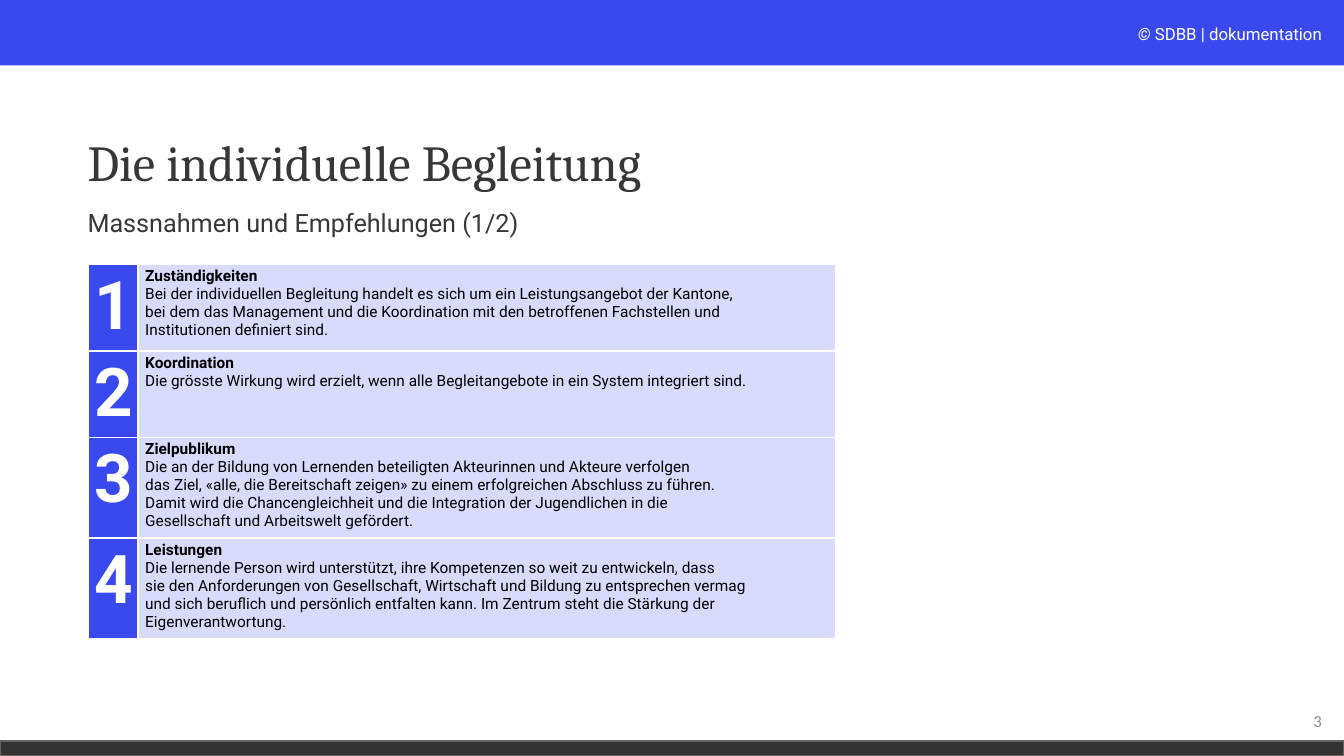
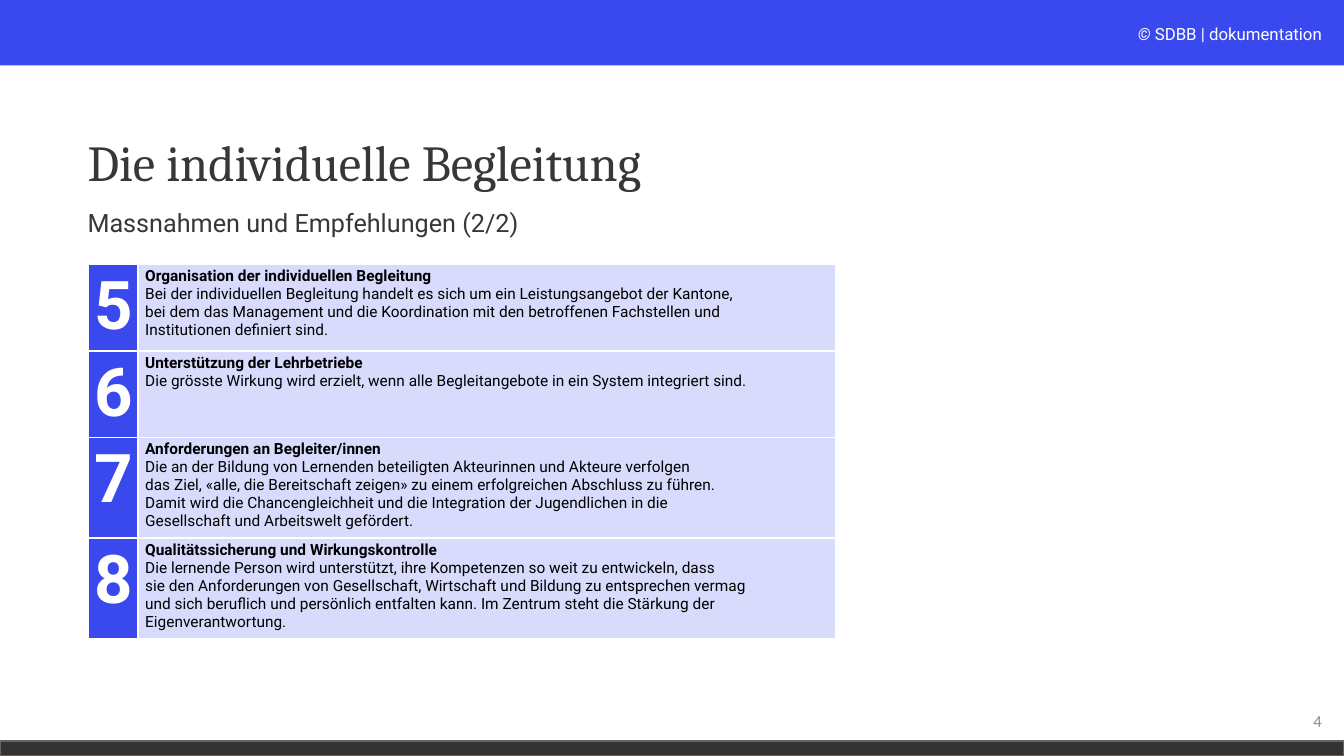
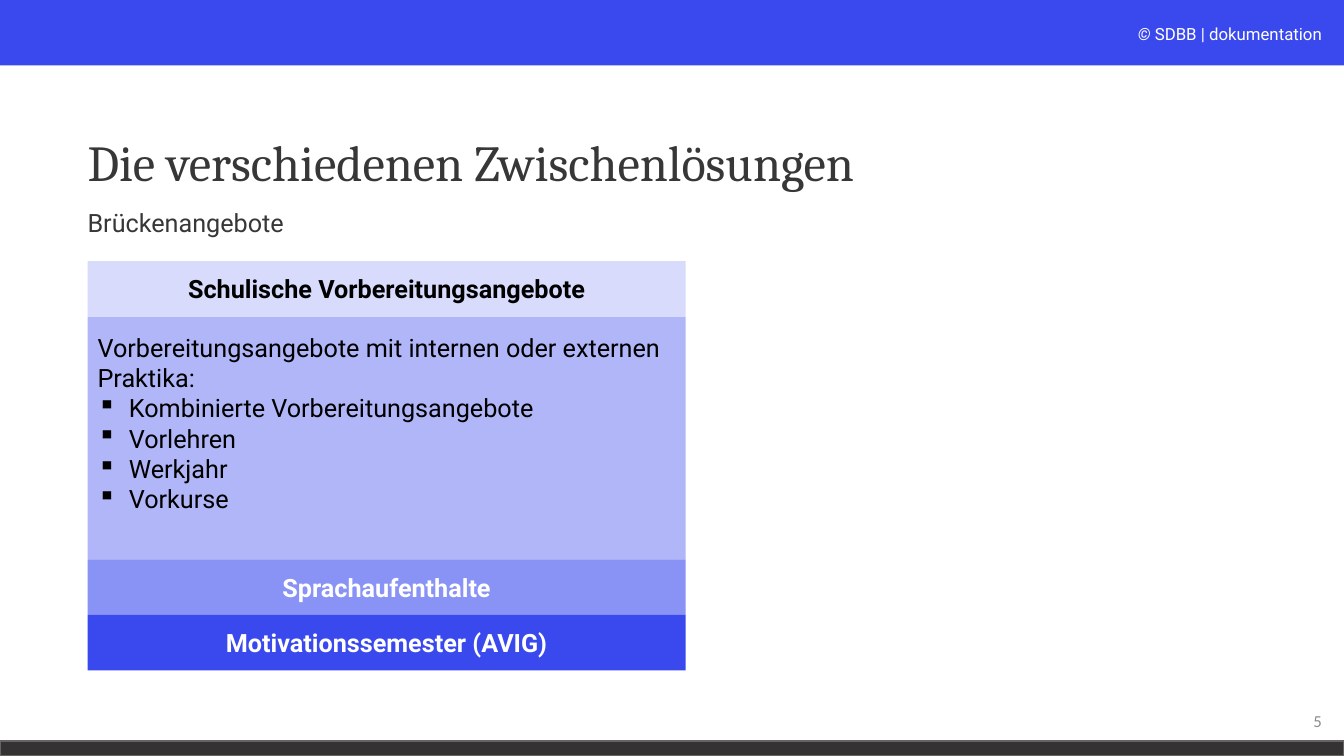
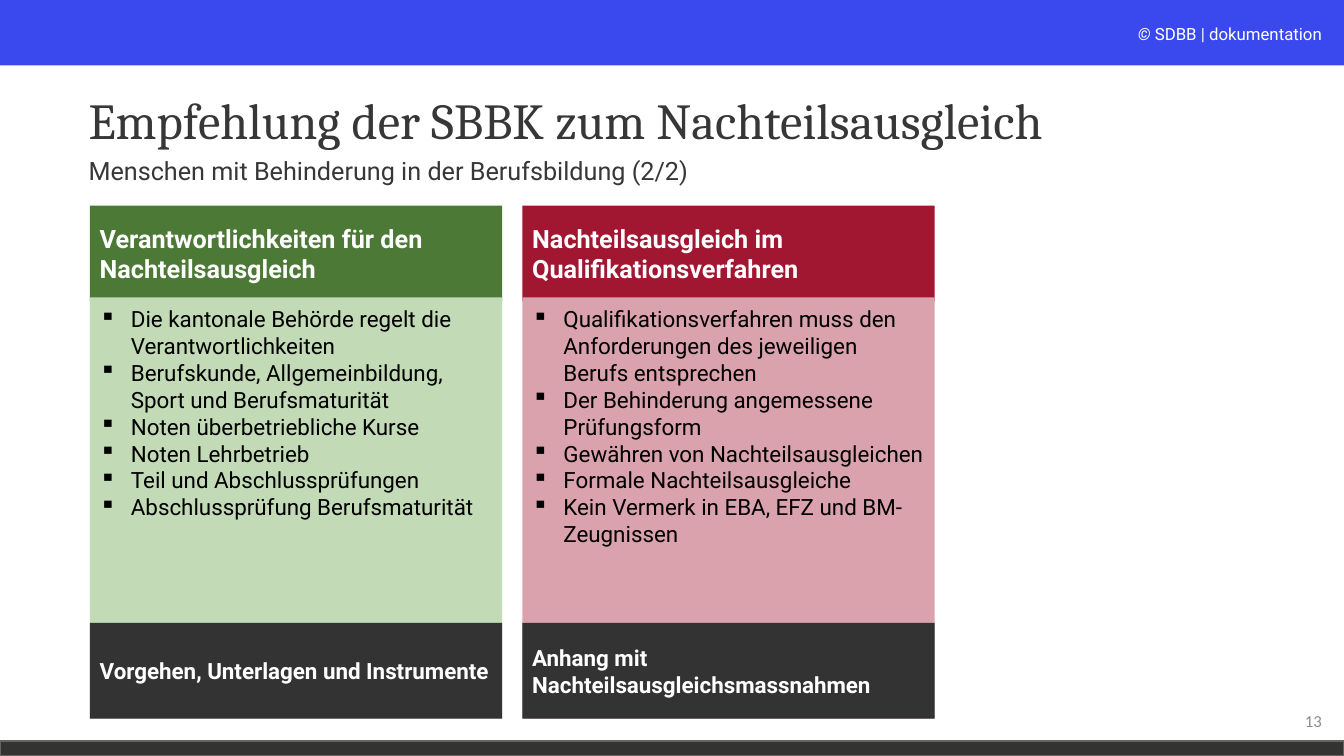
from lxml import etree
from pptx import Presentation
from pptx.dml.color import RGBColor
from pptx.enum.shapes import MSO_SHAPE
from pptx.enum.text import MSO_ANCHOR, PP_ALIGN
from pptx.oxml.ns import qn
from pptx.util import Inches, Pt

RECT = MSO_SHAPE.RECTANGLE
TOP, MIDDLE = MSO_ANCHOR.TOP, MSO_ANCHOR.MIDDLE
LEFT, CENTER, RIGHT = PP_ALIGN.LEFT, PP_ALIGN.CENTER, PP_ALIGN.RIGHT

COLORS = {
    "blue": "3A49EE", "blue_mid": "8992F5", "blue_soft": "B0B6F8", "blue_pale": "D8DBFC",
    "green": "4C7936", "green_pale": "C2DAB6", "red": "A11731", "red_pale": "DAA2AD",
    "dark": "333333", "dark_edge": "666360", "title": "373737", "number": "8C8C8C",
    "white": "FFFFFF", "black": "000000",
}

# Text styles: run font, plus paragraph settings
BASE = {"name": "Roboto", "size": 18, "color": "black", "bold": False, "italic": False,
        "align": LEFT, "spacing": None, "bullet": False}
TITLE = {**BASE, "name": "Cambria", "size": 36, "color": "title", "spacing": 0.9}
SUBTITLE = {**BASE, "color": "title", "spacing": 0.9}
COPYRIGHT = {**BASE, "size": 12, "color": "white", "align": RIGHT}
PAGE_NUMBER = {**COPYRIGHT, "name": "Calibri", "color": "number"}
ROW_NUMBER = {**BASE, "size": 48, "color": "white", "bold": True, "align": CENTER}
ROW_TEXT = {**BASE, "size": 11}
ROW_HEAD = {**ROW_TEXT, "bold": True}
BAND_HEAD = {**BASE, "bold": True, "align": CENTER}
BAND_ITEM = {**BASE, "bullet": True}
COLUMN_HEAD = {**BASE, "color": "white", "bold": True}
COLUMN_ITEM = {**BAND_ITEM, "size": 16}
COLUMN_FOOT = {**COLUMN_HEAD, "size": 16}

# Content
MEASURE_TEXTS = [
    ["Bei der individuellen Begleitung handelt es sich um ein Leistungsangebot der Kantone,",
     "bei dem das Management und die Koordination mit den betroffenen Fachstellen und",
     "Institutionen definiert sind."],
    ["Die grösste Wirkung wird erzielt, wenn alle Begleitangebote in ein System integriert sind."],
    ["Die an der Bildung von Lernenden beteiligten Akteurinnen und Akteure verfolgen",
     "das Ziel, «alle, die Bereitschaft zeigen» zu einem erfolgreichen Abschluss zu führen.",
     "Damit wird die Chancengleichheit und die Integration der Jugendlichen in die",
     "Gesellschaft und Arbeitswelt gefördert."],
    ["Die lernende Person wird unterstützt, ihre Kompetenzen so weit zu entwickeln, dass",
     "sie den Anforderungen von Gesellschaft, Wirtschaft und Bildung zu entsprechen vermag",
     "und sich beruflich und persönlich entfalten kann. Im Zentrum steht die Stärkung der",
     "Eigenverantwortung."],
]
MEASURE_SLIDES = [
    {"page": 3, "subtitle": "Massnahmen und Empfehlungen (1/2)", "first": 1,
     "heads": ["Zuständigkeiten", "Koordination", "Zielpublikum", "Leistungen"]},
    {"page": 4, "subtitle": "Massnahmen und Empfehlungen (2/2)", "first": 5,
     "heads": ["Organisation der individuellen Begleitung", "Unterstützung der Lehrbetriebe",
               "Anforderungen an Begleiter/innen", "Qualitätssicherung und Wirkungskontrolle"]},
]
BRIDGE_INTRO = "Vorbereitungsangebote mit internen oder externen Praktika:"
BRIDGE_OFFERS = ["Kombinierte Vorbereitungsangebote", "Vorlehren", "Werkjahr", "Vorkurse"]
# Height, fill, paragraphs, bottom inset
BRIDGE_BANDS = [
    (0.55, "blue_pale", [("Schulische Vorbereitungsangebote", BAND_HEAD)], 0.05),
    (2.41, "blue_soft",
     [(BRIDGE_INTRO, BASE)] + [(offer, BAND_ITEM) for offer in BRIDGE_OFFERS], 0.35),
    (0.55, "blue_mid", [("Sprachaufenthalte", {**BAND_HEAD, "color": "white"})], 0.05),
    (0.55, "blue", [("Motivationssemester (AVIG)", {**BAND_HEAD, "color": "white"})], 0.05),
]
COMPENSATION_COLUMNS = [
    {"head": "Verantwortlichkeiten für den Nachteilsausgleich",
     "fills": ("green", "green_pale"),
     "items": ["Die kantonale Behörde regelt die Verantwortlichkeiten",
               "Berufskunde, Allgemeinbildung, Sport und Berufsmaturität",
               "Noten überbetriebliche Kurse", "Noten Lehrbetrieb",
               "Teil und Abschlussprüfungen", "Abschlussprüfung Berufsmaturität"],
     "foot": "Vorgehen, Unterlagen und Instrumente"},
    {"head": "Nachteilsausgleich im Qualifikationsverfahren",
     "fills": ("red", "red_pale"),
     "items": ["Qualifikationsverfahren muss den Anforderungen des jeweiligen Berufs entsprechen",
               "Der Behinderung angemessene Prüfungsform",
               "Gewähren von Nachteilsausgleichen", "Formale Nachteilsausgleiche",
               "Kein Vermerk in EBA, EFZ und BM- Zeugnissen"],
     "foot": "Anhang mit Nachteilsausgleichsmassnahmen"},
]


def rgb(name):
    return RGBColor.from_string(COLORS[name])


def add_run(paragraph, text, style):
    run = paragraph.add_run()
    run.text = text
    values = {"name": style["name"], "size": Pt(style["size"]),
              "bold": style["bold"], "italic": style["italic"]}
    for attribute, value in values.items():
        setattr(run.font, attribute, value)
    run.font.color.rgb = rgb(style["color"])


def write(frame, paragraphs):
    """Fill a text frame with (text, style) paragraphs."""
    for index, (text, style) in enumerate(paragraphs):
        paragraph = frame.add_paragraph() if index else frame.paragraphs[0]
        paragraph.alignment = style["align"]
        if style["spacing"]:
            paragraph.line_spacing = style["spacing"]
        if style["bullet"]:
            properties = paragraph._p.get_or_add_pPr()
            properties.set("marL", str(Inches(0.31)))
            properties.set("indent", str(-Inches(0.31)))
            etree.SubElement(properties, qn("a:buChar")).set("char", "▪")
        add_run(paragraph, text, style)


def add_label(slide, box, text, style, anchor=TOP):
    frame = slide.shapes.add_textbox(*map(Inches, box)).text_frame
    frame.word_wrap = True
    frame.vertical_anchor = anchor
    write(frame, [(text, style)])
    return frame


def add_block(slide, box, fill, paragraphs=(), anchor=MIDDLE, inset_top=0.05, inset_bottom=0.05):
    block = slide.shapes.add_shape(RECT, *map(Inches, box))
    block.shadow.inherit = False
    block.fill.solid()
    block.fill.fore_color.rgb = rgb(fill)
    block.line.fill.background()
    values = {"word_wrap": True, "vertical_anchor": anchor,
              "margin_top": Inches(inset_top), "margin_bottom": Inches(inset_bottom)}
    for attribute, value in values.items():
        setattr(block.text_frame, attribute, value)
    write(block.text_frame, paragraphs)
    return block


def add_page(deck, page, title, subtitle, title_box=(0.77, 0.91, 8.82, 1.45), subtitle_top=2.04):
    """Add a slide with bands, copyright line, page number, title and subtitle."""
    slide = deck.slides.add_slide(deck.slide_layouts[6])
    add_block(slide, (0, 0, 13.33, 0.65), "blue")
    bottom_band = add_block(slide, (0, 7.35, 13.33, 0.15), "dark")
    bottom_band.line.color.rgb = rgb("dark_edge")
    bottom_band.line.width = Pt(1)
    owner = add_label(slide, (8.62, 0.19, 4.59, 0.3), "© ", {**COPYRIGHT, "italic": True})
    add_run(owner.paragraphs[0], "SDBB | dokumentation", COPYRIGHT)
    add_label(slide, title_box, title, TITLE, MIDDLE)
    add_label(slide, (10.21, 6.95, 3, 0.4), str(page), PAGE_NUMBER, MIDDLE)
    add_label(slide, (title_box[0], subtitle_top, 8.81, 0.54), subtitle, SUBTITLE)
    return slide


def fill_cell(cell, fill, paragraphs):
    properties = cell._tc.get_or_add_tcPr()
    for side in ("L", "R", "T", "B"):
        border = etree.SubElement(properties, qn(f"a:ln{side}"), w=str(Pt(1.5)))
        solid = etree.SubElement(border, qn("a:solidFill"))
        etree.SubElement(solid, qn("a:srgbClr"), val=COLORS["white"])
    cell.fill.solid()
    cell.fill.fore_color.rgb = rgb(fill)
    for side, inset in {"left": 0.07, "right": 0.07, "top": 0.03, "bottom": 0.03}.items():
        setattr(cell, f"margin_{side}", Inches(inset))
    write(cell.text_frame, paragraphs)


def add_measures(slide, first, heads):
    widths, heights = (0.5, 6.92), (0.85, 0.85, 1, 1)
    box = (0.87, 2.62, sum(widths), sum(heights))
    table = slide.shapes.add_table(len(heights), len(widths), *map(Inches, box)).table
    for column, width in zip(table.columns, widths):
        column.width = Inches(width)
    for index, (head, lines) in enumerate(zip(heads, MEASURE_TEXTS)):
        table.rows[index].height = Inches(heights[index])
        fill_cell(table.cell(index, 0), "blue", [(str(first + index), ROW_NUMBER)])
        fill_cell(table.cell(index, 1), "blue_pale",
                  [(head, ROW_HEAD)] + [(line, ROW_TEXT) for line in lines])


def add_bridge_bands(slide):
    top = 2.59
    for height, fill, paragraphs, inset_bottom in BRIDGE_BANDS:
        add_block(slide, (0.87, top, 5.93, height), fill, paragraphs, inset_bottom=inset_bottom)
        top += height


def add_compensation_columns(slide):
    width, gap = 4.09, 0.2
    for index, column in enumerate(COMPENSATION_COLUMNS):
        left = 0.89 + index * (width + gap)
        head_fill, body_fill = column["fills"]
        add_block(slide, (left, 2.04, width, 0.95), head_fill, [(column["head"], COLUMN_HEAD)])
        add_block(slide, (left, 2.95, width, 4.18), body_fill,
                  [(item, COLUMN_ITEM) for item in column["items"]], TOP, inset_top=0.08)
        add_block(slide, (left, 6.18, width, 0.95), "dark", [(column["foot"], COLUMN_FOOT)])


def main():
    deck = Presentation()
    deck.slide_width, deck.slide_height = Inches(13.33), Inches(7.5)
    for measures in MEASURE_SLIDES:
        slide = add_page(deck, measures["page"], "Die individuelle Begleitung",
                         measures["subtitle"])
        add_measures(slide, measures["first"], measures["heads"])
    add_bridge_bands(add_page(deck, 5, "Die verschiedenen Zwischenlösungen", "Brückenangebote"))
    add_compensation_columns(add_page(
        deck, 13, "Empfehlung der SBBK zum Nachteilsausgleich",
        "Menschen mit Behinderung in der Berufsbildung (2/2)",
        title_box=(0.78, 0.5, 10.6, 1.45), subtitle_top=1.53))
    deck.save("out.pptx")


if __name__ == "__main__":
    main()
